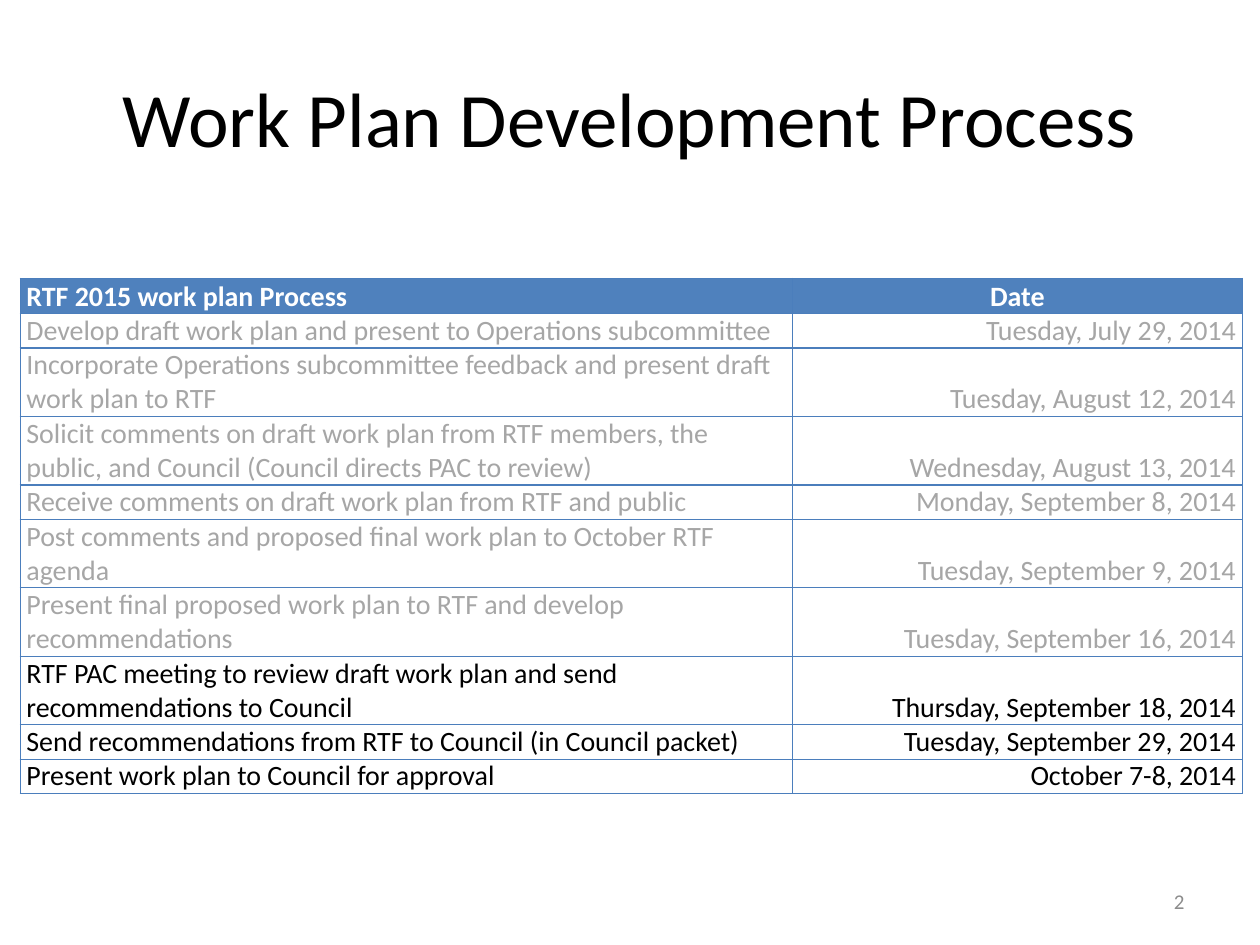
from lxml.etree import SubElement
from pptx import Presentation
from pptx.dml.color import RGBColor
from pptx.enum.text import MSO_ANCHOR, PP_ALIGN
from pptx.oxml.ns import qn
from pptx.util import Inches, Pt

BLUE, BORDER = "4F81BD", "4B7EBC"
WHITE, BLACK, DONE, NUMBER = "FFFFFF", "000000", "A6A6A6", "8C8C8C"


def format_text(paragraph, size, color, alignment, bold=False):
    paragraph.alignment = alignment
    paragraph.font.name = "Calibri"
    paragraph.font.size = Pt(size)
    paragraph.font.bold = bold
    paragraph.font.color.rgb = RGBColor.from_string(color)


def add_borders(cell, color):
    properties = cell._tc.get_or_add_tcPr()
    for position, side in enumerate(("a:lnL", "a:lnR", "a:lnT", "a:lnB")):
        line = SubElement(properties, qn(side), w=str(Pt(0.75)))
        fill = SubElement(line, qn("a:solidFill"))
        SubElement(fill, qn("a:srgbClr"), val=color)
        # Border lines must come before the cell fill
        properties.insert(position, line)


presentation = Presentation()
presentation.slide_width = Inches(10)
presentation.slide_height = Inches(7.5)
slide = presentation.slides.add_slide(presentation.slide_layouts[5])

# Title
title = slide.shapes.title
title.left, title.top = Inches(0.5), Inches(0.3)
title.width, title.height = Inches(9), Inches(1.25)
title.text_frame.text = "Work Plan Development Process"
title.text_frame.vertical_anchor = MSO_ANCHOR.MIDDLE
format_text(title.text_frame.paragraphs[0], 44, BLACK, PP_ALIGN.CENTER)

# Schedule: step, date, minimum row height
schedule = [
    ("RTF 2015 work plan Process", "Date", 0.28),
    ("Develop draft work plan and present to Operations subcommittee",
     "Tuesday, July 29, 2014", 0.27),
    ("Incorporate Operations subcommittee feedback and present draft work plan to RTF",
     "Tuesday, August 12, 2014", 0.5),
    ("Solicit comments on draft work plan from RTF members, the public, "
     "and Council (Council directs PAC to review)",
     "Wednesday, August 13, 2014", 0.5),
    ("Receive comments on draft work plan from RTF and public",
     "Monday, September 8, 2014", 0.27),
    ("Post comments and proposed final work plan to October RTF agenda",
     "Tuesday, September 9, 2014", 0.27),
    ("Present final proposed work plan to RTF and develop recommendations",
     "Tuesday, September 16, 2014", 0.27),
    ("RTF PAC meeting to review draft work plan and send recommendations to Council",
     "Thursday, September 18, 2014", 0.27),
    ("Send recommendations from RTF to Council (in Council packet)",
     "Tuesday, September 29, 2014", 0.27),
    ("Present work plan to Council for approval", "October 7-8, 2014", 0.27),
]
last_done_row = 6

# Schedule table
table = slide.shapes.add_table(len(schedule), 2, Inches(0.16), Inches(2.21),
                               Inches(9.7), Inches(4.02)).table
table.horz_banding = False
table.columns[0].width = Inches(6.13)
table.columns[1].width = Inches(3.57)

for row, (step, date, height) in enumerate(schedule):
    table.rows[row].height = Inches(height)
    is_header = row == 0
    if is_header:
        color, date_alignment = WHITE, PP_ALIGN.CENTER
    else:
        color = DONE if row <= last_done_row else BLACK
        date_alignment = PP_ALIGN.RIGHT
    for column, (text, alignment) in enumerate([(step, PP_ALIGN.LEFT),
                                                (date, date_alignment)]):
        cell = table.cell(row, column)
        cell.text = text
        cell.vertical_anchor = MSO_ANCHOR.BOTTOM
        cell.margin_left = cell.margin_right = Inches(0.05)
        cell.margin_top = cell.margin_bottom = 0
        cell.fill.solid()
        cell.fill.fore_color.rgb = RGBColor.from_string(BLUE if is_header else WHITE)
        add_borders(cell, BORDER)
        format_text(cell.text_frame.paragraphs[0], 16, color, alignment, is_header)

# Slide number
number_box = slide.shapes.add_textbox(Inches(7.17), Inches(6.95), Inches(2.33), Inches(0.4))
number_box.text_frame.word_wrap = True
number_box.text_frame.vertical_anchor = MSO_ANCHOR.MIDDLE
number_box.text_frame.text = "2"
format_text(number_box.text_frame.paragraphs[0], 12, NUMBER, PP_ALIGN.RIGHT)

presentation.save("out.pptx")
